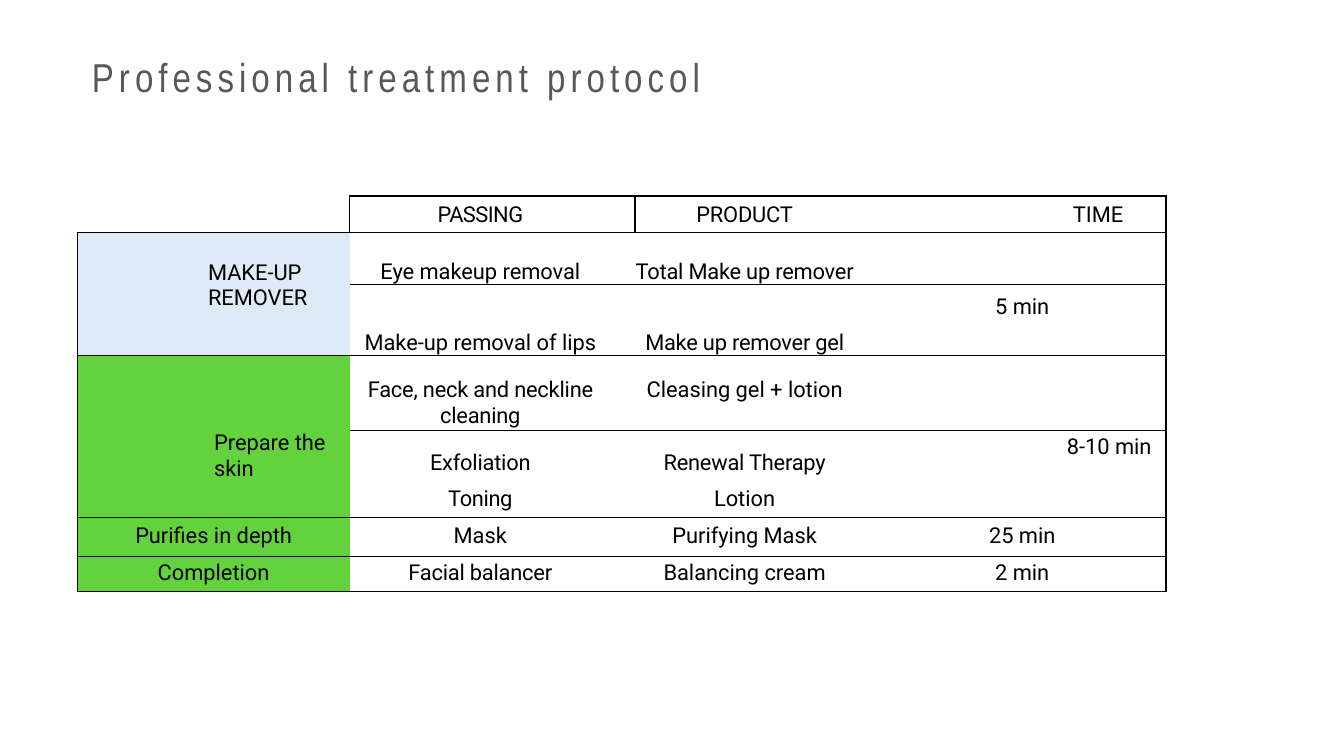
from dataclasses import dataclass
from typing import Optional

from lxml.etree import SubElement
from pptx import Presentation
from pptx.dml.color import RGBColor
from pptx.enum.shapes import MSO_SHAPE
from pptx.enum.text import MSO_ANCHOR as Anchor, PP_ALIGN as Align
from pptx.oxml import parse_xml
from pptx.oxml.ns import nsdecls, qn
from pptx.util import Inches, Pt

BLACK = RGBColor(0x00, 0x00, 0x00)
WHITE = RGBColor(0xFF, 0xFF, 0xFF)
GREY = RGBColor(0x58, 0x58, 0x58)
PALE_BLUE = RGBColor(0xDE, 0xEB, 0xF7)
GREEN = RGBColor(0x63, 0xD2, 0x3C)

NO_GRID_STYLE = "{2D5ABB26-0587-4C30-8999-92F81FD0307C}"
COLUMN_WIDTHS = (2.25, 2.36, 2.29, 2.1)
ROW_HEIGHTS = (0.3, 0.43, 0.29, 0.3, 0.62, 0.43, 0.29, 0.32, 0.29)
# Right inset that shifts the centred text of each column
CENTRED_INSETS = (0, 0.2, 0.48, 0.28)
# Horizontal rule above a row -> first column that it covers
RULE_STARTS = {0: 1, 1: 0, 2: 1, 4: 0, 5: 1, 7: 0, 8: 0, 9: 0}


@dataclass(frozen=True)
class Entry:
    row: int
    col: int
    text: str
    top: float = 0
    indent: Optional[float] = None
    line_points: Optional[float] = None
    tracking: int = 0


@dataclass(frozen=True)
class Stage:
    first_row: int
    row_count: int
    color: RGBColor


STAGES = (
    Stage(1, 3, PALE_BLUE),
    Stage(4, 3, GREEN),
    Stage(7, 1, GREEN),
    Stage(8, 1, GREEN),
)

ENTRIES = (
    Entry(0, 1, "PASSING", top=0.05, tracking=-30),
    Entry(0, 2, "PRODUCT", top=0.05, tracking=-10),
    Entry(0, 3, "TIME", top=0.05, indent=1.33),
    Entry(1, 0, "MAKE-UP REMOVER", top=0.23, indent=1.08),
    Entry(1, 1, "Eye makeup removal", top=0.05, line_points=27.4),
    Entry(1, 2, "Total Make up remover", top=0.05, line_points=27.4, tracking=-10),
    Entry(2, 3, "5 min", line_points=20.8),
    Entry(3, 1, "Make-up removal of lips", line_points=21.5),
    Entry(3, 2, "Make up remover gel", line_points=21.5, tracking=-10),
    Entry(4, 0, "Prepare the skin", top=0.62, indent=1.13),
    Entry(4, 1, "Face, neck and neckline cleaning", top=0.18, tracking=-10),
    Entry(4, 2, "Cleasing gel + lotion", top=0.18),
    Entry(5, 1, "Exfoliation", top=0.16, tracking=-10),
    Entry(5, 2, "Renewal Therapy", top=0.16, tracking=-10),
    Entry(5, 3, "8-10 min", top=0.03, indent=1.28),
    Entry(6, 1, "Toning", top=0.03, tracking=-20),
    Entry(6, 2, "Lotion", top=0.03),
    Entry(7, 0, "Purifies in depth", top=0.05),
    Entry(7, 1, "Mask", top=0.05),
    Entry(7, 2, "Purifying Mask", top=0.05),
    Entry(7, 3, "25 min", top=0.05),
    Entry(8, 0, "Completion", top=0.03),
    Entry(8, 1, "Facial balancer", top=0.03, tracking=-10),
    Entry(8, 2, "Balancing cream", top=0.03),
    Entry(8, 3, "2 min", top=0.03),
)


def write(frame, text: str, *, font: str, size: float, color: RGBColor,
          align=Align.LEFT, line_spacing=None, tracking: int = 0) -> None:
    """Write one paragraph; tracking is in hundredths of a point."""
    paragraph = frame.paragraphs[0]
    paragraph.alignment = align
    if line_spacing is not None:
        paragraph.line_spacing = line_spacing
    run = paragraph.add_run()
    run.text = text
    run.font.name = font
    run.font.size = Pt(size)
    run.font.color.rgb = color
    if tracking:
        run.font._element.set("spc", str(tracking))


def add_title(slide) -> None:
    title = slide.shapes.add_shape(
        MSO_SHAPE.RECTANGLE, Inches(0.76), Inches(0.48), Inches(5.78), Inches(0.36))
    title.shadow.inherit = False
    title.fill.solid()
    title.fill.fore_color.rgb = WHITE
    title.line.fill.background()
    frame = title.text_frame
    frame.word_wrap = True
    frame.vertical_anchor = Anchor.MIDDLE
    frame.margin_left = frame.margin_right = frame.margin_top = frame.margin_bottom = 0
    write(frame, "Professional treatment protocol", font="Arial Narrow", size=24,
          color=GREY, line_spacing=0.9, tracking=300)


def has_rule(row: int, col: int) -> bool:
    return row in RULE_STARTS and col >= RULE_STARTS[row]


def draw_borders(cell, row: int, col: int) -> None:
    """Set all four sides, since an unset side may take a neighbour's line."""
    header = row == 0
    last_col = len(COLUMN_WIDTHS) - 1
    sides = {
        "lnL": col in (1, 2) if header else col == 0,
        "lnR": col == last_col or (header and col in (0, 1)),
        "lnT": has_rule(row, col),
        "lnB": has_rule(row + (cell.span_height if cell.is_merge_origin else 1), col),
    }
    properties = cell._tc.get_or_add_tcPr()
    for position, (tag, shown) in enumerate(sides.items()):
        line = parse_xml(f'<a:{tag} {nsdecls("a")} w="{Pt(1)}"/>')
        if shown:
            fill = SubElement(line, qn("a:solidFill"))
            SubElement(fill, qn("a:srgbClr")).set("val", str(BLACK))
        else:
            SubElement(line, qn("a:noFill"))
        properties.insert(position, line)


def fill_entry(cell, entry: Entry) -> None:
    centred = entry.indent is None
    cell.margin_top = Inches(entry.top)
    if centred:
        cell.margin_right = Inches(CENTRED_INSETS[entry.col])
    else:
        cell.margin_left = Inches(entry.indent)
    write(cell.text_frame, entry.text, font="Roboto", size=13, color=BLACK,
          align=Align.CENTER if centred else Align.LEFT, tracking=entry.tracking,
          line_spacing=Pt(entry.line_points) if entry.line_points else None)


def add_protocol(slide) -> None:
    protocol = slide.shapes.add_table(
        len(ROW_HEIGHTS), len(COLUMN_WIDTHS), Inches(0.64), Inches(1.62),
        Inches(sum(COLUMN_WIDTHS)), Inches(sum(ROW_HEIGHTS))).table
    protocol.first_row = protocol.horz_banding = False
    protocol._tbl.tblPr.find(qn("a:tableStyleId")).text = NO_GRID_STYLE
    for column, width in zip(protocol.columns, COLUMN_WIDTHS):
        column.width = Inches(width)
    for row, height in zip(protocol.rows, ROW_HEIGHTS):
        row.height = Inches(height)
    for stage in STAGES:
        if stage.row_count > 1:
            last_row = stage.first_row + stage.row_count - 1
            protocol.cell(stage.first_row, 0).merge(protocol.cell(last_row, 0))

    stage_colors = {stage.first_row + step: stage.color
                    for stage in STAGES for step in range(stage.row_count)}
    entries = {(entry.row, entry.col): entry for entry in ENTRIES}
    for row in range(len(ROW_HEIGHTS)):
        for col in range(len(COLUMN_WIDTHS)):
            cell = protocol.cell(row, col)
            cell.margin_left = cell.margin_right = cell.margin_top = cell.margin_bottom = 0
            if col == 0 and row in stage_colors:
                cell.fill.solid()
                cell.fill.fore_color.rgb = stage_colors[row]
            else:
                cell.fill.background()
            draw_borders(cell, row, col)
            if (row, col) in entries:
                fill_entry(cell, entries[row, col])
            else:
                # A small size keeps an empty cell from stretching its row
                SubElement(cell.text_frame.paragraphs[0]._p, qn("a:endParaRPr")).set("sz", "800")


def main() -> None:
    presentation = Presentation()
    presentation.slide_width = Inches(11.11)
    presentation.slide_height = Inches(6.25)
    slide = presentation.slides.add_slide(presentation.slide_layouts[6])
    add_title(slide)
    add_protocol(slide)
    presentation.save("out.pptx")


if __name__ == "__main__":
    main()
